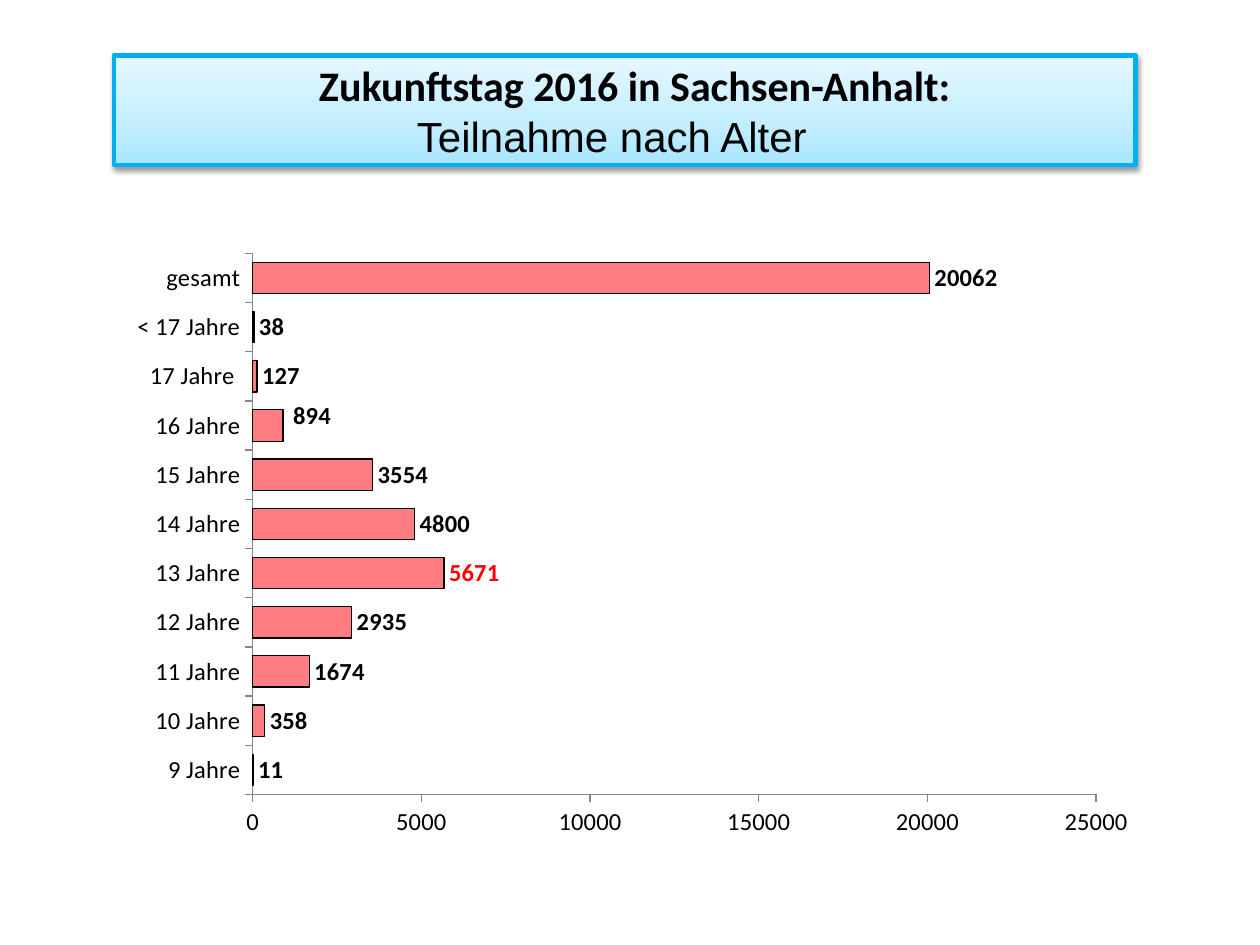
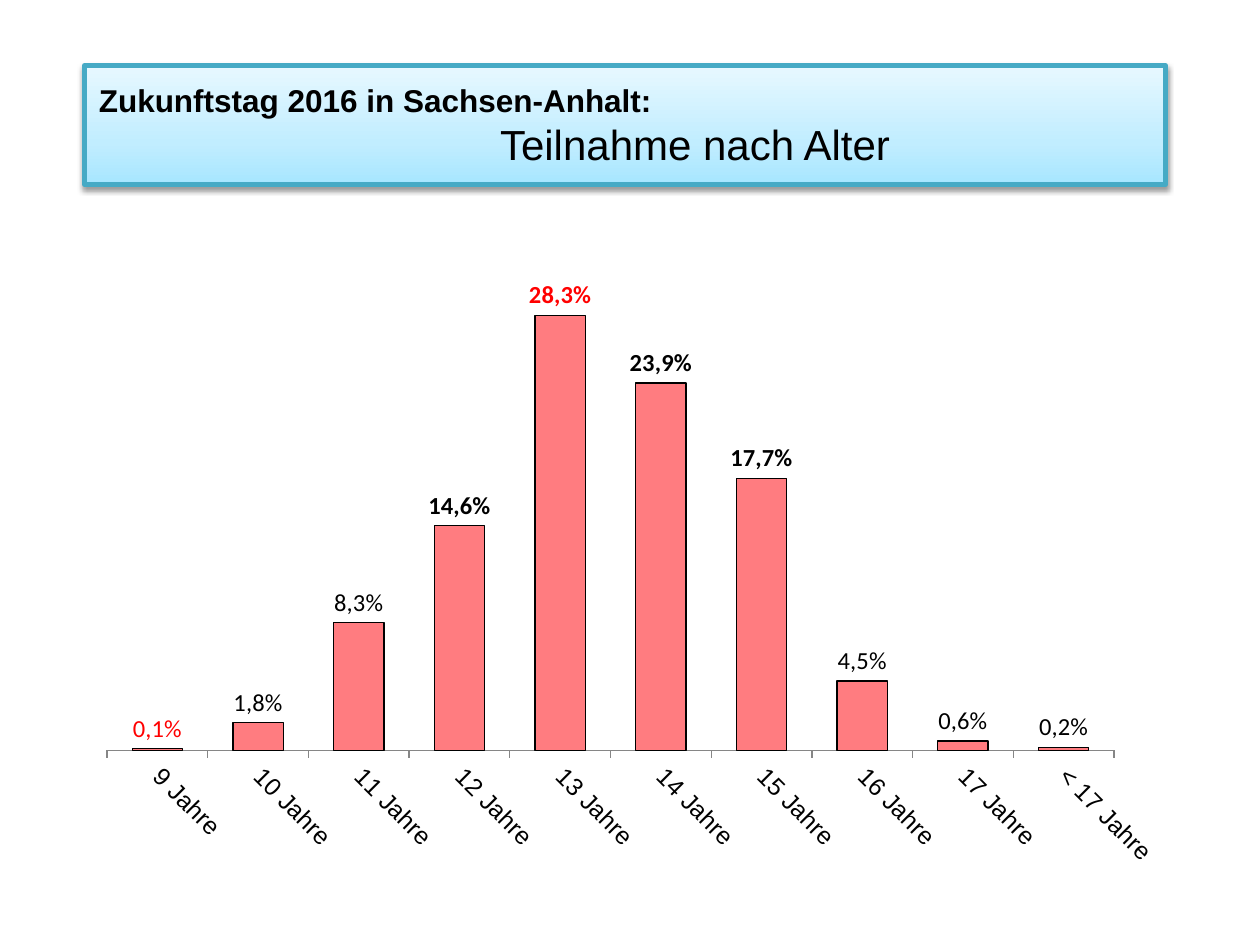
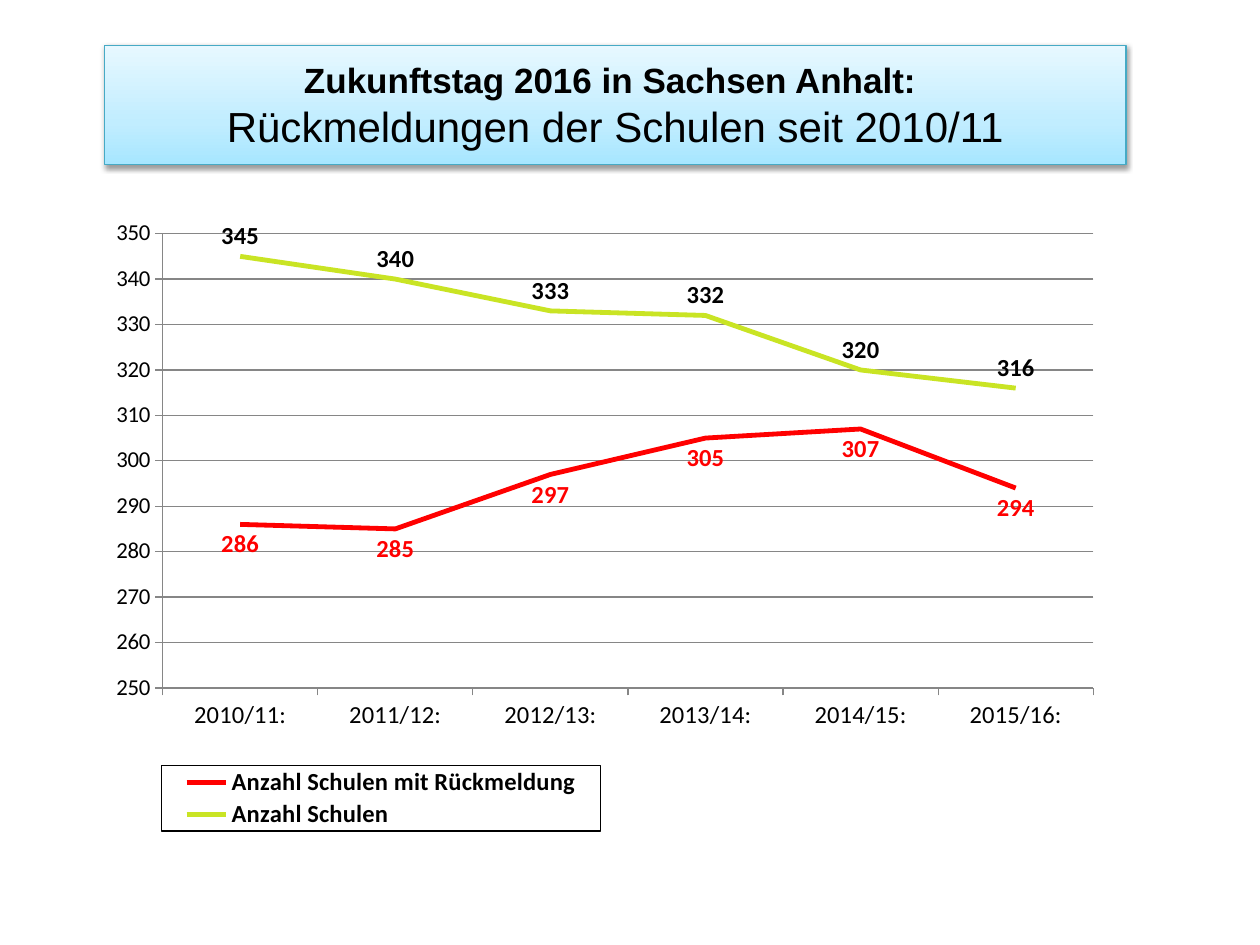
from dataclasses import dataclass

from pptx import Presentation
from pptx import util as u
from pptx.chart import data as chart_data
from pptx.dml.color import RGBColor
from pptx.enum import chart as kinds, shapes, text
from pptx.oxml import parse_xml
from pptx.oxml.ns import nsdecls, qn


@dataclass(frozen=True)
class Theme:
    width: int = u.Inches(10)
    height: int = u.Inches(7.5)
    heading: str = "Arial"
    body: str = "Calibri"
    black: str = "000000"
    red: str = "FF0000"
    lime: str = "C9E424"
    bar: str = "FF7C80"
    axis: str = "868686"
    sky: str = "00B0F0"
    teal: str = "46AAC5"
    band: tuple = ((0, "A7E6FF"), (35, "C1EDFF"), (100, "E7F8FF"))
    title: int = 24
    label: int = 14
    scale: int = 13
    thick: float = 2.75
    thin: float = 0.75


THEME = Theme()
AGES = [f"{age} Jahre" for age in range(9, 17)] + ["17 Jahre ", "< 17 Jahre"]
COUNTS = [11, 358, 1674, 2935, 5671, 4800, 3554, 894, 127, 38]
SHARES = [0.1, 1.8, 8.3, 14.6, 28.3, 23.9, 17.7, 4.5, 0.6, 0.2]
YEARS = [f"{year}/{year - 1999}:" for year in range(2010, 2016)]
REPLIES = [286, 285, 297, 305, 307, 294]
SCHOOLS = [345, 340, 333, 332, 320, 316]


def across(percent):
    return round(THEME.width * percent / 100)


def down(percent):
    return round(THEME.height * percent / 100)


def place(left, top, width, height):
    return across(left), down(top), across(width), down(height)


def style_font(font, size=THEME.label, color=THEME.black, bold=False, name=THEME.body):
    font.size = u.Pt(size)
    font.bold = bold
    font.name = name
    font.color.rgb = RGBColor.from_string(color)


def style_line(line, color, width):
    line.color.rgb = RGBColor.from_string(color)
    line.width = u.Pt(width)


def fill_band(box):
    stops = "".join(
        f'<a:gs pos="{share * 1000}"><a:srgbClr val="{color}"/></a:gs>'
        for share, color in THEME.band
    )
    gradient = parse_xml(
        f'<a:gradFill {nsdecls("a")} rotWithShape="1"><a:gsLst>{stops}</a:gsLst>'
        '<a:lin ang="16200000" scaled="1"/></a:gradFill>'
    )
    box._element.spPr.find(qn("a:prstGeom")).addnext(gradient)


def drop_shadow(box):
    box.shadow.inherit = False
    effects = box._element.spPr.find(qn("a:effectLst"))
    effects.append(parse_xml(
        f'<a:outerShdw {nsdecls("a")} blurRad="{u.Pt(3.1)}" dist="{u.Pt(1.6)}" '
        f'dir="5400000" rotWithShape="0"><a:srgbClr val="{THEME.black}">'
        '<a:alpha val="38000"/></a:srgbClr></a:outerShdw>'
    ))


def add_title(page, area, border, border_width, lines):
    box = page.shapes.add_shape(shapes.MSO_SHAPE.RECTANGLE, *place(*area))
    fill_band(box)
    style_line(box.line, border, border_width)
    drop_shadow(box)
    frame = box.text_frame
    frame.word_wrap = True
    frame.vertical_anchor = text.MSO_ANCHOR.MIDDLE
    frame.text = "\n".join(line["text"] for line in lines)
    for para, line in zip(frame.paragraphs, lines):
        indent = line.get("indent")
        if indent is None:
            para.alignment = text.PP_ALIGN.CENTER
        else:
            para.alignment = text.PP_ALIGN.LEFT
            para._p.get_or_add_pPr().set("marL", str(across(indent)))
        style_font(para.runs[0].font, line.get("size", THEME.title),
                   bold=line.get("bold", False), name=line.get("font", THEME.heading))


def manual_layout(**parts):
    children = "".join(f'<c:{tag} val="{value}"/>' for tag, value in parts.items())
    return parse_xml(
        f'<c:layout {nsdecls("c")}><c:manualLayout>{children}</c:manualLayout></c:layout>'
    )


def share_layout(area, **target):
    left, top, width, height = (round(percent / 100, 3) for percent in area)
    return manual_layout(**target, xMode="edge", yMode="edge",
                         x=left, y=top, w=width, h=height)


def set_layout(parent, index, layout):
    for old in parent.findall(qn("c:layout")):
        parent.remove(old)
    parent.insert(index, layout)


def style_axis(axis, size=THEME.label, name=THEME.body):
    axis.major_tick_mark = kinds.XL_TICK_MARK.OUTSIDE
    axis.minor_tick_mark = kinds.XL_TICK_MARK.NONE
    axis.has_major_gridlines = False
    style_line(axis.format.line, THEME.axis, THEME.thin)
    style_font(axis.tick_labels.font, size, name=name)


def add_chart(page, kind, area, plot_area, categories, series, top, step, bottom=0,
              number_format="0"):
    data = chart_data.CategoryChartData(number_format=number_format)
    data.categories = categories
    for name, values in series:
        data.add_series(name, values)
    chart = page.shapes.add_chart(kind, *place(*area), data).chart
    chart.has_title = False
    chart.has_legend = False
    style_font(chart.font, 10)
    plot_xml = chart._chartSpace.find(qn("c:chart")).find(qn("c:plotArea"))
    set_layout(plot_xml, 0, share_layout(plot_area, layoutTarget="inner"))
    style_axis(chart.category_axis)
    scale = chart.value_axis
    style_axis(scale)
    scale.minimum_scale, scale.maximum_scale, scale.major_unit = bottom, top, step
    scale.tick_labels.number_format = "0"
    scale.tick_labels.number_format_is_linked = False
    return chart


def style_bars(chart, gap):
    plot = chart.plots[0]
    plot.gap_width = gap
    plot.vary_by_categories = False
    bars = plot.series[0]
    bars.format.fill.solid()
    bars.format.fill.fore_color.rgb = RGBColor.from_string(THEME.bar)
    style_line(bars.format.line, THEME.black, THEME.thin)
    return bars


def label_series(series, position, color=THEME.black, bold=True, number_format="0"):
    labels = series.data_labels
    labels.show_value = True
    labels.number_format = number_format
    labels.number_format_is_linked = False
    labels.position = position
    style_font(labels.font, color=color, bold=bold)


def style_curve(series, color, label_color, position):
    series.smooth = False
    series.marker.style = kinds.XL_MARKER_STYLE.NONE
    style_line(series.format.line, color, THEME.thick)
    label_series(series, position, label_color)


def add_legend(chart, area):
    chart.has_legend = True
    legend = chart.legend
    legend.position = kinds.XL_LEGEND_POSITION.BOTTOM
    legend.include_in_layout = False
    style_font(legend.font, bold=True)
    set_layout(legend._element, 1, share_layout(area))
    border = parse_xml(
        f'<c:spPr {nsdecls("c", "a")}><a:ln w="{u.Pt(THEME.thin)}"><a:solidFill>'
        f'<a:srgbClr val="{THEME.black}"/></a:solidFill></a:ln></c:spPr>'
    )
    legend._element.find(qn("c:txPr")).addprevious(border)


def build_age_counts(page):
    add_title(page, (9.05, 5.87, 81.1, 11.6), THEME.sky, THEME.thick, [
        {"text": "Zukunftstag 2016 in Sachsen-Anhalt:", "bold": True,
         "font": THEME.body, "indent": 15.28},
        {"text": "Teilnahme nach Alter", "indent": 23.05},
    ])
    chart = add_chart(page, kinds.XL_CHART_TYPE.BAR_CLUSTERED,
                      (9.02, 25.85, 84.3, 69.33), (13.1, 1.4, 79.4, 82.6),
                      AGES + ["gesamt"], [("Series 1", COUNTS + [sum(COUNTS)])],
                      top=25000, step=5000)
    bars = style_bars(chart, gap=57)
    outside = kinds.XL_LABEL_POSITION.OUTSIDE_END
    label_series(bars, outside)
    peak = bars.points[COUNTS.index(max(COUNTS))].data_label
    style_font(peak.font, color=THEME.red, bold=True)
    peak.position = outside
    raised = bars.points[AGES.index("16 Jahre")].data_label
    style_font(raised.font, bold=True)
    raised.position = outside
    set_layout(raised._get_or_add_dLbl(), 1, manual_layout(x=0.005, y=-0.015))


def build_age_shares(page):
    add_title(page, (6.7, 6.93, 85.8, 12.6), THEME.teal, THEME.thick, [
        {"text": "Zukunftstag 2016 in Sachsen-Anhalt:", "bold": True,
         "size": 18, "indent": 0.16},
        {"text": "Teilnahme nach Alter", "indent": 32},
    ])
    chart = add_chart(page, kinds.XL_CHART_TYPE.COLUMN_CLUSTERED,
                      (6.45, 24.8, 85.4, 68.27), (2.4, 8.5, 93.6, 71.5),
                      AGES, [("Series 1", SHARES)], top=30, step=5,
                      number_format="0.0")
    chart.value_axis.visible = False
    ages = chart.category_axis
    style_axis(ages, name=THEME.heading)
    ages.tick_label_position = kinds.XL_TICK_LABEL_POSITION.LOW
    turned = ages._element.find(qn("c:txPr")).find(qn("a:bodyPr"))
    turned.set("rot", "2700000")
    turned.set("vert", "horz")
    bars = style_bars(chart, gap=100)
    label_series(bars, kinds.XL_LABEL_POSITION.OUTSIDE_END, bold=False,
                 number_format="0.0")
    extremes = min(SHARES), max(SHARES)
    for index, share in enumerate(SHARES):
        label = bars.points[index].data_label
        label.text_frame.text = f"{share:.1f}%".replace(".", ",")
        span = label.text_frame.paragraphs[0].runs[0]
        style_font(span.font, color=THEME.red if share in extremes else THEME.black,
                   bold=share > 10)
        label.position = kinds.XL_LABEL_POSITION.OUTSIDE_END


def build_school_replies(page):
    add_title(page, (8.27, 4.8, 81.1, 12.6), THEME.teal, THEME.thin, [
        {"text": "Zukunftstag 2016 in Sachsen Anhalt: ", "bold": True, "size": 20},
        {"text": "Rückmeldungen der Schulen seit 2010/11"},
    ])
    chart = add_chart(page, kinds.XL_CHART_TYPE.LINE,
                      (7.47, 19.6, 85, 72.4), (6.4, 7.1, 86.9, 66.4), YEARS,
                      [("Anzahl Schulen mit Rückmeldung", REPLIES),
                       ("Anzahl Schulen", SCHOOLS)],
                      top=350, step=10, bottom=250)
    scale = chart.value_axis
    style_axis(scale, THEME.scale)
    scale.has_major_gridlines = True
    style_line(scale.major_gridlines.format.line, THEME.axis, THEME.thin)
    replies, schools = chart.plots[0].series
    style_curve(replies, THEME.red, THEME.red, kinds.XL_LABEL_POSITION.BELOW)
    style_curve(schools, THEME.lime, THEME.black, kinds.XL_LABEL_POSITION.ABOVE)
    add_legend(chart, (6.3, 84.8, 41, 9.6))


def main():
    deck = Presentation()
    deck.slide_width, deck.slide_height = THEME.width, THEME.height
    blank = deck.slide_layouts[6]
    for build in (build_age_counts, build_age_shares, build_school_replies):
        build(deck.slides.add_slide(blank))
    deck.save("out.pptx")


if __name__ == "__main__":
    main()
